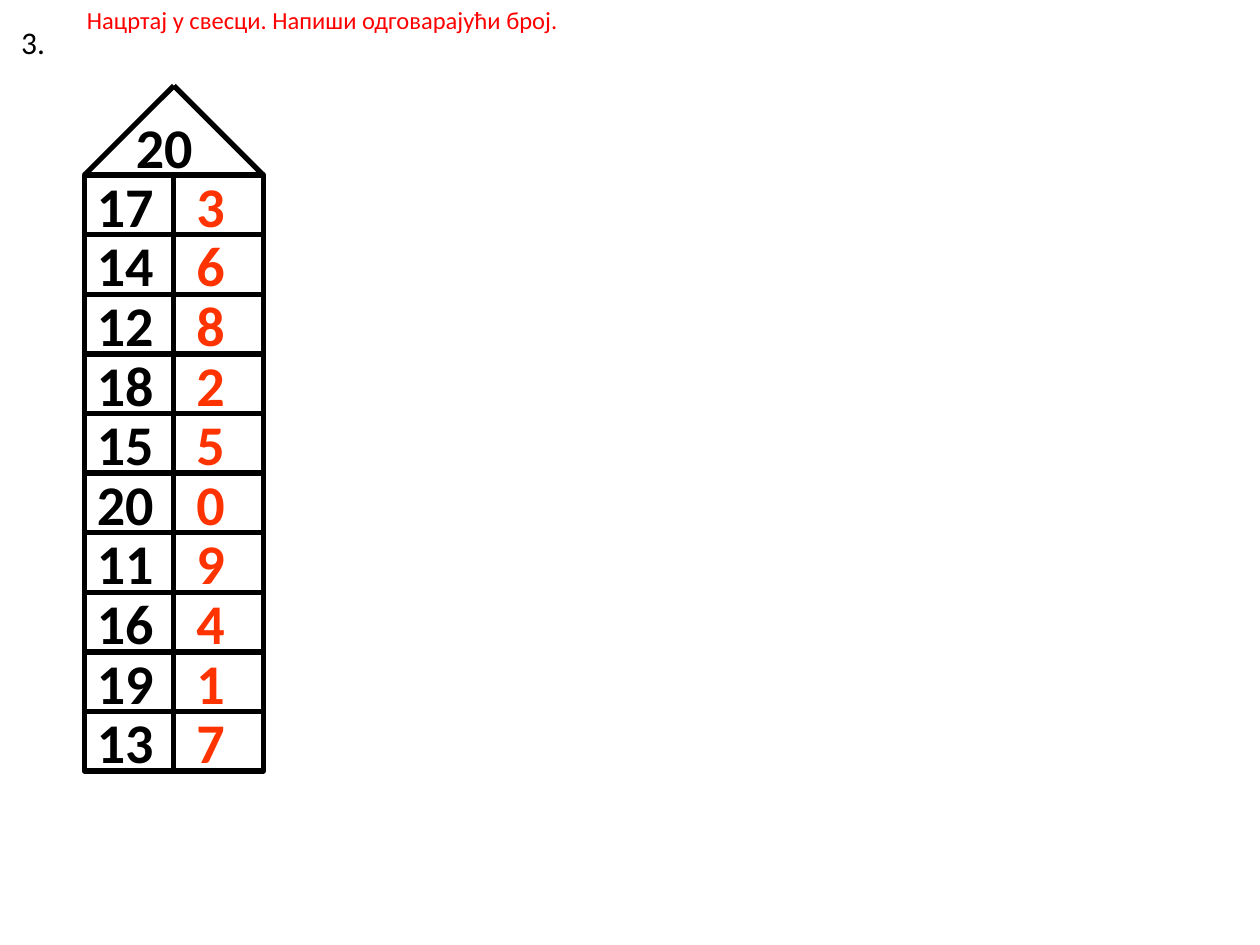
import pptx
import pptx.dml.color
import pptx.enum.shapes
import pptx.enum.text
import pptx.oxml.ns
import pptx.util
from lxml import etree

Inches = pptx.util.Inches
RGBColor = pptx.dml.color.RGBColor

BLACK = RGBColor(0x00, 0x00, 0x00)
RED = RGBColor(0xFF, 0x00, 0x00)
ORANGE = RGBColor(0xFF, 0x33, 0x00)

LEFT, TOP, WIDTH, HEIGHT = 0.67, 1.39, 1.42, 4.73
MIDDLE, RIGHT = LEFT + WIDTH / 2, LEFT + WIDTH
PEAK = 0.68
TOTAL = 20
NUMBERS = [17, 14, 12, 18, 15, 20, 11, 16, 19, 13]


class Worksheet:
    """Draws the elements of one slide in a shared style."""

    font = "Calibri"
    line_width = pptx.util.Pt(3)

    def __init__(self, page):
        self.page = page

    def style_line(self, line):
        line.color.rgb = BLACK
        line.width = self.line_width

    def add_words(self, box, words, size, color, bold=False, wrap=False):
        frame = box.text_frame
        frame.word_wrap = wrap
        frame.auto_size = pptx.enum.text.MSO_AUTO_SIZE.SHAPE_TO_FIT_TEXT
        frame.vertical_anchor = pptx.enum.text.MSO_ANCHOR.TOP
        para = frame.paragraphs[0]
        para.alignment = pptx.enum.text.PP_ALIGN.LEFT
        span = para.add_run()
        span.text = words
        span.font.name = self.font
        span.font.size = pptx.util.Pt(size)
        span.font.bold = bold
        span.font.color.rgb = color

    def title(self, words, left, top, width, height):
        box = self.page.shapes.title
        box.left, box.top = Inches(left), Inches(top)
        box.width, box.height = Inches(width), Inches(height)
        self.add_words(box, words, 14, RED, wrap=True)

    def label(self, words, left, top, width, height, size=32, color=BLACK, bold=True):
        box = self.page.shapes.add_textbox(
            Inches(left), Inches(top), Inches(width), Inches(height))
        self.add_words(box, words, size, color, bold)

    def frame(self, left, top, width, height):
        box = self.page.shapes.add_shape(
            pptx.enum.shapes.MSO_SHAPE.RECTANGLE,
            Inches(left), Inches(top), Inches(width), Inches(height))
        box.shadow.inherit = False
        box.fill.background()
        self.style_line(box.line)
        return box

    def line(self, x1, y1, x2, y2):
        connector = self.page.shapes.add_connector(
            pptx.enum.shapes.MSO_CONNECTOR.STRAIGHT,
            Inches(x1), Inches(y1), Inches(x2), Inches(y2))
        self.style_line(connector.line)
        etree.SubElement(connector._element.spPr, pptx.oxml.ns.qn("a:effectLst"))
        return connector


def main():
    deck = pptx.Presentation()
    deck.slide_width, deck.slide_height = Inches(10), Inches(7.5)
    sheet = Worksheet(deck.slides.add_slide(deck.slide_layouts[5]))
    row_height = HEIGHT / len(NUMBERS)

    sheet.title("Нацртај у свесци. Напиши одговарајући број.", 0.59, -0.01, 5.49, 0.34)
    sheet.label("3.", 0.07, 0.13, 0.39, 0.4, size=18, bold=False)

    house = sheet.frame(LEFT, TOP, WIDTH, HEIGHT)
    for row in range(1, len(NUMBERS)):
        y = TOP + row * row_height
        sheet.line(LEFT, y, RIGHT, y)
    divider = sheet.line(MIDDLE, TOP, MIDDLE, TOP + HEIGHT)
    divider.begin_connect(house, 0)
    divider.end_connect(house, 2)
    for eave in (LEFT, RIGHT):
        sheet.line(eave, TOP, MIDDLE, PEAK)

    sheet.label(str(TOTAL), 0.98, 0.84, 0.69, 0.63)
    for row, number in enumerate(NUMBERS):
        y = TOP - 0.08 + row * row_height
        sheet.label(str(number), LEFT, y, 0.69, 0.63)
        sheet.label(str(TOTAL - number), 1.46, y, 0.45, 0.63, color=ORANGE)

    deck.save("out.pptx")


if __name__ == "__main__":
    main()
